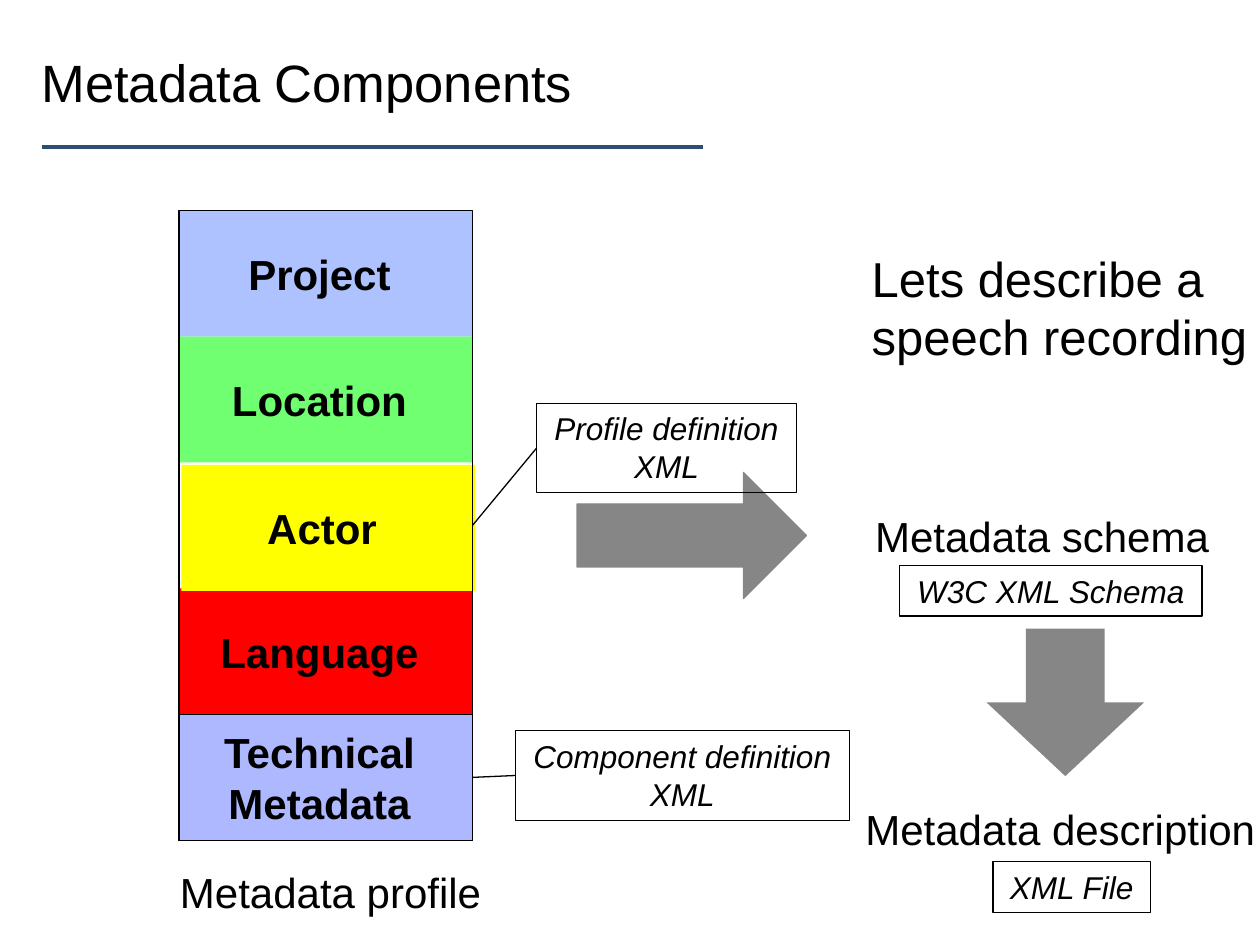
import pptx
import pptx.util
import pptx.dml.color
import pptx.enum.shapes
import pptx.enum.text
import pptx.oxml

Inches = pptx.util.Inches
RGBColor = pptx.dml.color.RGBColor
Shape = pptx.enum.shapes.MSO_SHAPE
Align = pptx.enum.text.PP_ALIGN
Anchor = pptx.enum.text.MSO_ANCHOR
AutoSize = pptx.enum.text.MSO_AUTO_SIZE

BLACK = RGBColor(0x00, 0x00, 0x00)
NAVY = RGBColor(0x2D, 0x4E, 0x6F)
GREY = RGBColor(0x86, 0x86, 0x86)
RED = RGBColor(0xFF, 0x00, 0x00)
YELLOW = RGBColor(0xFF, 0xFF, 0x00)
GREEN = RGBColor(0x70, 0xFF, 0x70)
SKY = RGBColor(0xAD, 0xC2, 0xFF)
LAVENDER = RGBColor(0xAD, 0xB8, 0xFF)

STACK_LEFT, STACK_TOP, STACK_WIDTH, BLOCK_HEIGHT = 1.42, 1.67, 2.33, 1


def write(frame, text, size, bold=False, italic=False, align=Align.CENTER,
          anchor=Anchor.TOP, left_inset=0.1, wrap=False):
    frame.word_wrap = wrap
    frame.auto_size = AutoSize.NONE if wrap else AutoSize.SHAPE_TO_FIT_TEXT
    frame.vertical_anchor = anchor
    frame.margin_left = Inches(left_inset)
    frame.margin_right = Inches(0.1)
    frame.margin_top = frame.margin_bottom = Inches(0.05)
    frame.text = text
    for paragraph in frame.paragraphs:
        paragraph.alignment = align
        font = paragraph.font
        font.name = "Arial"
        font.size = pptx.util.Pt(size)
        font.bold = bold
        font.italic = italic
        font.color.rgb = BLACK


class SlideBuilder:
    thin = 0.75

    def __init__(self, slide):
        self.slide = slide

    def title(self, text, *box):
        title = self.slide.shapes.title
        title.left, title.top, title.width, title.height = map(Inches, box)
        write(title.text_frame, text, 30, align=Align.LEFT,
              anchor=Anchor.MIDDLE, left_inset=0, wrap=True)

    def shape(self, kind, *box, fill=None, outline=None):
        shape = self.slide.shapes.add_shape(kind, *map(Inches, box))
        shape.shadow.inherit = False
        if fill is None:
            shape.fill.background()
        else:
            shape.fill.solid()
            shape.fill.fore_color.rgb = fill
        if outline is None:
            shape.line.fill.background()
        else:
            shape.line.color.rgb = outline
            shape.line.width = pptx.util.Pt(self.thin)
        return shape

    def block(self, text, row, fill, outline=None, shift=0):
        block = self.shape(Shape.RECTANGLE, STACK_LEFT + shift,
                           STACK_TOP + row * BLOCK_HEIGHT + shift,
                           STACK_WIDTH, BLOCK_HEIGHT, fill=fill, outline=outline)
        write(block.text_frame, text, 24, bold=True, anchor=Anchor.MIDDLE,
              left_inset=0, wrap=True)
        return block

    def tag(self, text, *box):
        tag = self.shape(Shape.RECTANGLE, *box, outline=BLACK)
        write(tag.text_frame, text, 18, italic=True)
        return tag

    def caption(self, text, *box, size=24, align=Align.CENTER):
        caption = self.slide.shapes.add_textbox(*map(Inches, box))
        write(caption.text_frame, text, size, align=align)

    def line(self, *ends, color=BLACK, width=thin):
        line = self.slide.shapes.add_connector(
            pptx.enum.shapes.MSO_CONNECTOR.STRAIGHT, *map(Inches, ends))
        line.line.color.rgb = color
        line.line.width = pptx.util.Pt(width)
        line._element.spPr.append(pptx.oxml.parse_xml(
            '<a:effectLst xmlns:a="http://schemas.openxmlformats.org/drawingml/2006/main"/>'))
        return line

    def link(self, source, target):
        link = self.line(0, 0, 1, 1)
        link.begin_connect(source, 3)
        link.end_connect(target, 1)


def main():
    deck = pptx.Presentation()
    deck.slide_width, deck.slide_height = Inches(10), Inches(7.5)
    page = SlideBuilder(deck.slides.add_slide(deck.slide_layouts[5]))

    page.title("Metadata Components", 0.33, 0.21, 6.33, 0.88)
    page.line(0.33, 1.17, 5.58, 1.17, color=NAVY, width=2.25)

    page.block("Language", 3, RED)
    technical = page.block("Technical\nMetadata", 4, LAVENDER, outline=BLACK)
    page.block("Actor", 2, YELLOW, shift=0.02)
    page.block("Location", 1, GREEN)
    page.block("Project", 0, SKY)

    page.shape(Shape.RIGHT_ARROW, 4.58, 3.75, 1.82, 1, fill=GREY, outline=GREY)
    page.caption("Metadata schema", 6.83, 4, 2.88, 0.91)
    page.shape(Shape.DOWN_ARROW, 7.83, 4.99, 1.25, 1.17, fill=GREY)
    page.caption("Metadata description", 6.75, 6.33, 3.33, 0.91)
    page.caption("Lets describe a\nspeech recording", 6.82, 1.92, 3.21, 1.04,
                 size=28, align=Align.LEFT)

    component = page.tag("Component definition\nXML", 4.09, 5.8, 2.65, 0.71)
    page.tag("W3C XML Schema", 7.14, 4.49, 2.4, 0.4)
    page.tag("XML File", 7.88, 6.84, 1.25, 0.4)
    page.link(technical, component)

    profile = page.tag("Profile definition\nXML", 4.26, 3.2, 2.06, 0.71)
    stack = page.shape(Shape.RECTANGLE, STACK_LEFT, STACK_TOP, STACK_WIDTH,
                       5 * BLOCK_HEIGHT, outline=BLACK)
    page.link(stack, profile)
    page.caption("Metadata profile", 1.33, 6.83, 2.62, 0.51, align=Align.LEFT)

    deck.save("out.pptx")


if __name__ == "__main__":
    main()
